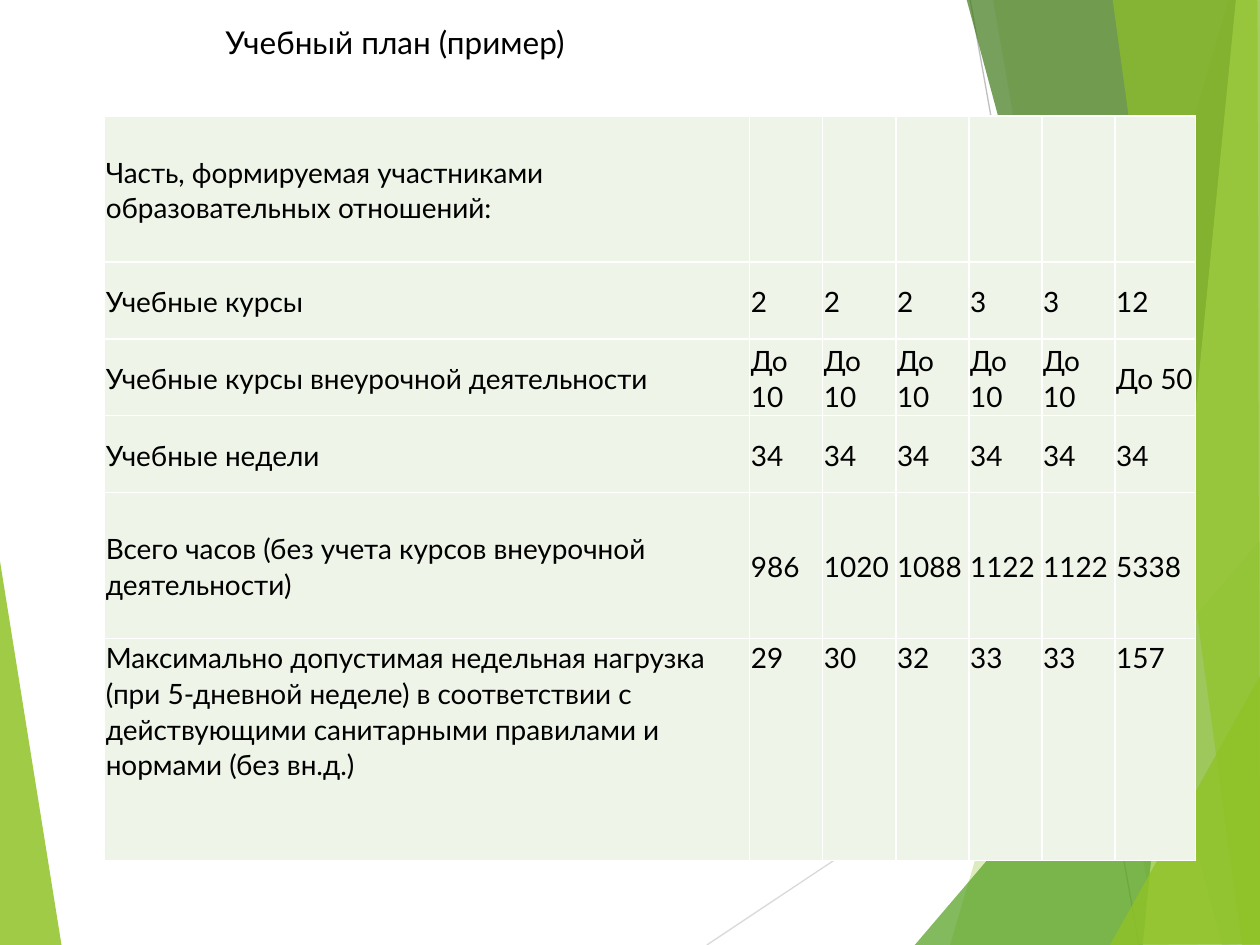
from lxml.etree import SubElement
from pptx import Presentation
from pptx.dml.color import RGBColor
from pptx.enum.shapes import MSO_CONNECTOR
from pptx.enum.text import MSO_ANCHOR
from pptx.oxml.ns import qn
from pptx.util import Inches, Pt

FONT = "Lato"
BLACK = RGBColor(0x00, 0x00, 0x00)
WHITE = RGBColor(0xFF, 0xFF, 0xFF)
CELL_FILL = RGBColor(0xEE, 0xF4, 0xE8)
LIGHT_GRAY = RGBColor(0xD9, 0xD9, 0xD9)
GRAY = RGBColor(0xBF, 0xBF, 0xBF)
LIME = RGBColor(0x90, 0xC2, 0x26)
GREEN = RGBColor(0x54, 0xA0, 0x21)
DARK_GREEN = RGBColor(0x3F, 0x78, 0x19)
PALE_LIME = RGBColor(0xC0, 0xE4, 0x74)

LEFT_WEDGE = (LIME, 85, [(-0.01, 4.39), (0.49, 7.51), (-0.01, 7.5)])
RAYS = [
    (LIGHT_GRAY, (5.61, 7.5), (10.01, 4.57)),
    (GRAY, (7.7, 0), (9.04, 7.5)),
]
# Colour, opacity in percent, corners
RIGHT_FACETS = [
    (LIME, 30, [(9.75, 0), (7.54, 7.5), (10.02, 7.51), (10.01, 0.01)]),
    (LIME, 20, [(7.88, -0.01), (9.19, 7.5), (10.01, 7.5), (10.01, -0.01)]),
    (GREEN, 72, [(7.26, 7.5), (10, 4.29), (10.01, 7.5)]),
    (DARK_GREEN, 70, [(7.67, -0.01), (9.7, 7.5), (10.01, 7.49), (10.01, -0.01)]),
    (PALE_LIME, 70, [(9.81, -0.01), (9.07, 7.5), (10.01, 7.5), (10, -0.01)]),
    (LIME, 65, [(8.83, -0.01), (9.86, 7.5), (10, 7.5), (9.98, -0.01)]),
    (LIME, 80, [(8.81, 7.5), (10.01, 5.35), (10.01, 7.49)]),
]

COLUMN_WIDTHS = [5.12] + [0.58] * 5 + [0.64]
ROW_HEIGHTS = [1.16, 0.61, 0.61, 0.61, 1.16, 1.76]
PLAN_ROWS = [
    ["Часть, формируемая участниками образовательных отношений:"] + [""] * 6,
    ["Учебные курсы", "2", "2", "2", "3", "3", "12"],
    ["Учебные курсы внеурочной деятельности"] + ["До 10"] * 5 + ["До 50"],
    ["Учебные недели"] + ["34"] * 6,
    ["Всего часов (без учета курсов внеурочной деятельности)",
     "986", "1020", "1088", "1122", "1122", "5338"],
    ["Максимально допустимая недельная нагрузка (при 5-дневной неделе) "
     "в соответствии с действующими санитарными правилами и нормами (без вн.д.)",
     "29", "30", "32", "33", "33", "157"],
]


def style_font(paragraph, size):
    paragraph.font.name = FONT
    paragraph.font.size = Pt(size)
    paragraph.font.color.rgb = BLACK


def add_facet(slide, left, top, color, opacity, corners):
    points = [(left + Inches(x), top + Inches(y)) for x, y in corners]
    builder = slide.shapes.build_freeform(*points[0], scale=1.0)
    builder.add_line_segments(points[1:], close=True)
    shape = builder.convert_to_shape()
    shape.shadow.inherit = False
    shape.fill.solid()
    shape.fill.fore_color.rgb = color
    shape.line.fill.background()
    color_element = shape.fill._xPr.find(".//" + qn("a:srgbClr"))
    SubElement(color_element, qn("a:alpha"), val=str(opacity * 1000))


def add_ray(slide, left, top, color, start, end):
    connector = slide.shapes.add_connector(
        MSO_CONNECTOR.STRAIGHT,
        left + Inches(start[0]), top + Inches(start[1]),
        left + Inches(end[0]), top + Inches(end[1]))
    connector.line.color.rgb = color
    connector.line.width = Pt(0.75)
    SubElement(connector._element.spPr, qn("a:effectLst"))


def add_background(slide, left, top):
    add_facet(slide, left, top, *LEFT_WEDGE)
    for ray in RAYS:
        add_ray(slide, left, top, *ray)
    for facet in RIGHT_FACETS:
        add_facet(slide, left, top, *facet)


def add_title(slide, left, top, width, height):
    text_frame = slide.shapes.add_textbox(left, top, width, height).text_frame
    text_frame.word_wrap = True
    paragraph = text_frame.paragraphs[0]
    paragraph.text = "Учебный план (пример)"
    style_font(paragraph, 18)


def add_borders(cell):
    properties = cell._tc.get_or_add_tcPr()
    for side in ("lnL", "lnR", "lnT", "lnB"):
        line = SubElement(properties, qn(f"a:{side}"), w=str(Pt(1)))
        fill = SubElement(line, qn("a:solidFill"))
        SubElement(fill, qn("a:srgbClr"), val=str(WHITE))


def fill_cell(cell, text, anchor):
    add_borders(cell)
    cell.fill.solid()
    cell.fill.fore_color.rgb = CELL_FILL
    cell.margin_left = cell.margin_right = Inches(0.01)
    cell.margin_top = cell.margin_bottom = 0
    cell.vertical_anchor = anchor
    if text:
        paragraph = cell.text_frame.paragraphs[0]
        paragraph.text = text
        paragraph.line_spacing = 1.07
        paragraph.space_after = Pt(8)
        style_font(paragraph, 16)


def add_plan_table(slide, left, top, width, height):
    table = slide.shapes.add_table(
        len(ROW_HEIGHTS), len(COLUMN_WIDTHS), left, top, width, height).table
    table.first_row = table.horz_banding = False
    for column, column_width in zip(table.columns, COLUMN_WIDTHS):
        column.width = Inches(column_width)
    for row, row_height in zip(table.rows, ROW_HEIGHTS):
        row.height = Inches(row_height)
    last_row = len(PLAN_ROWS) - 1
    for row_index, texts in enumerate(PLAN_ROWS):
        anchor = MSO_ANCHOR.TOP if row_index == last_row else MSO_ANCHOR.MIDDLE
        for column_index, text in enumerate(texts):
            fill_cell(table.cell(row_index, column_index), text, anchor)


def main():
    presentation = Presentation()
    presentation.slide_width = Inches(10)
    presentation.slide_height = Inches(7.5)
    slide = presentation.slides.add_slide(presentation.slide_layouts[6])
    add_background(slide, Inches(0), Inches(0))
    add_title(slide, Inches(1.69), Inches(0.13), Inches(7.09), Inches(0.4))
    add_plan_table(slide, Inches(0.83), Inches(0.92), Inches(8.66), Inches(5.91))
    presentation.save("out.pptx")


if __name__ == "__main__":
    main()
